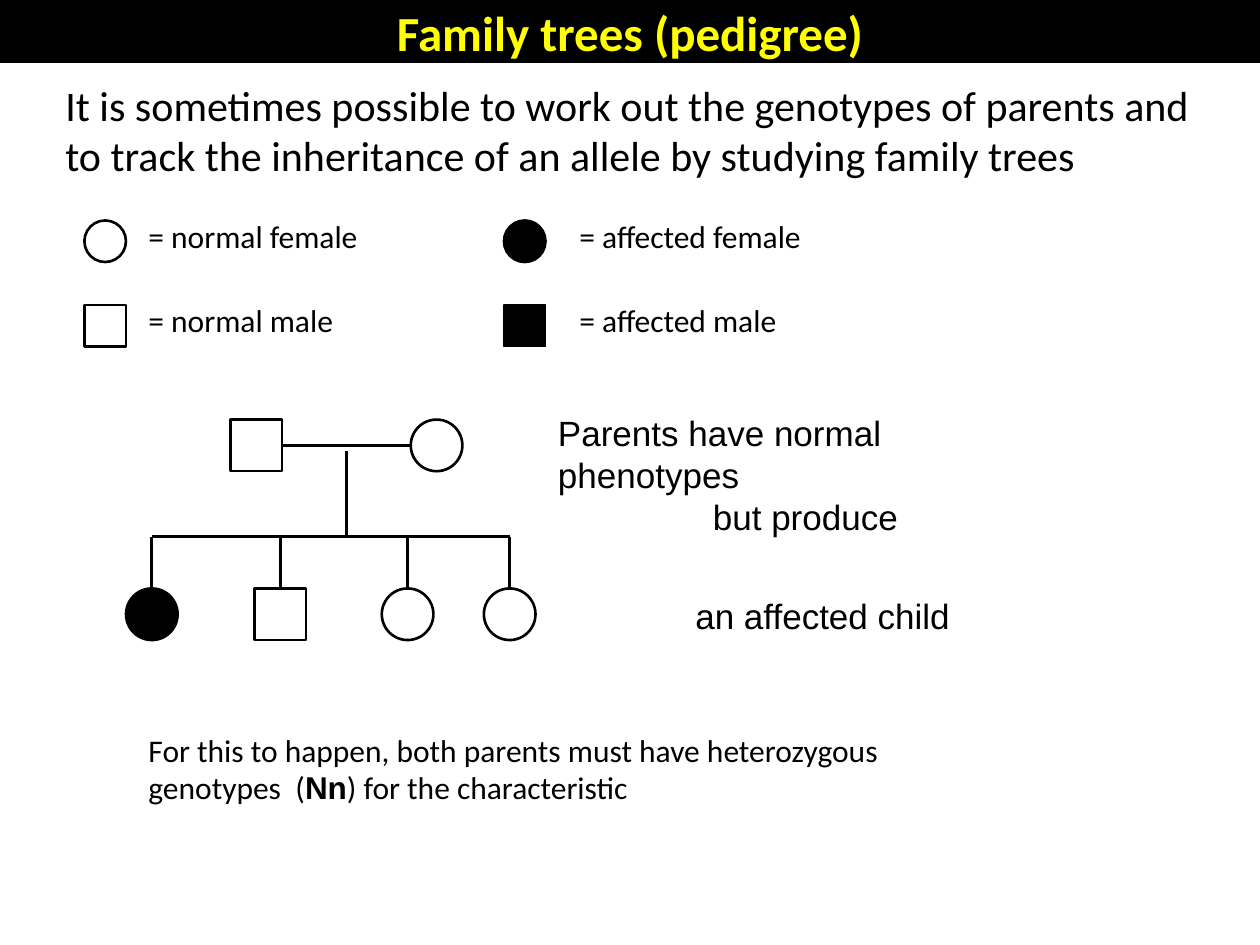
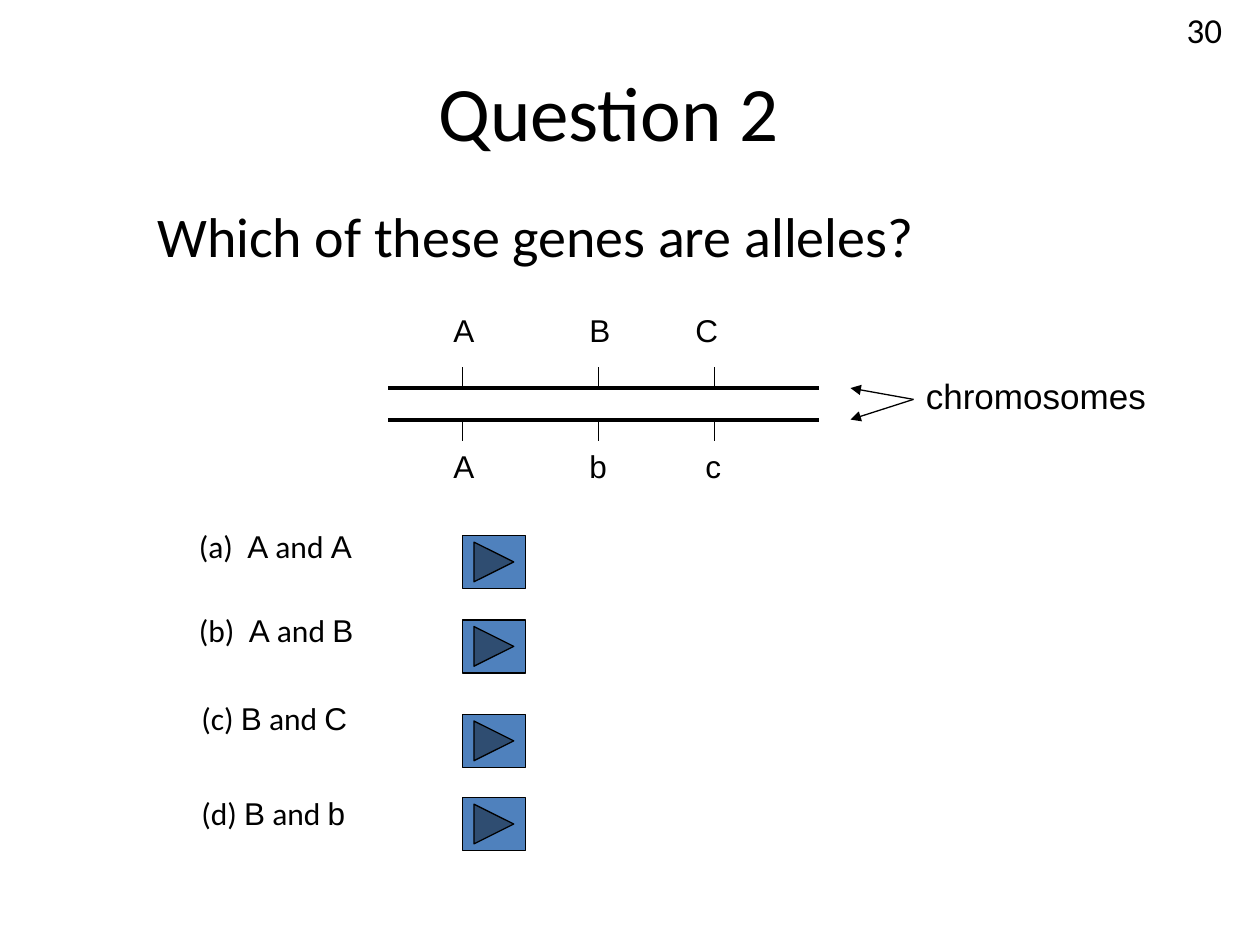
import dataclasses
import typing

import lxml.etree
import pptx
import pptx.dml.color
import pptx.enum.shapes
import pptx.enum.text
import pptx.oxml.ns
import pptx.shapes.autoshape
import pptx.shapes.connector
import pptx.slide
import pptx.text.text
import pptx.util

Inches = pptx.util.Inches
Pt = pptx.util.Pt
qn = pptx.oxml.ns.qn
Preset = pptx.enum.shapes.MSO_SHAPE
Anchor = pptx.enum.text.MSO_ANCHOR
Align = pptx.enum.text.PP_ALIGN

COLORS = {
    "ink": "000000",
    "paper": "FFFFFF",
    "title": "FFFF00",
    "button": "4F81BD",
}
BODY = {"name": "Calibri", "size": Pt(18), "bold": False}
ARIAL = {"name": "Arial"}
NOTE = BODY | ARIAL | {"size": Pt(20)}
CENTERED = {"alignment": Align.CENTER}
FEMALE = Preset.OVAL
MALE = Preset.RECTANGLE


@dataclasses.dataclass(frozen=True)
class Run:
    text: str
    format: dict[str, typing.Any] = dataclasses.field(default_factory=dict)


Paragraph = tuple[Run, ...]


@dataclasses.dataclass(frozen=True)
class Label:
    left: float
    top: float
    width: float
    height: float
    paragraphs: tuple[Paragraph, ...]
    font: dict[str, typing.Any] = dataclasses.field(default_factory=lambda: BODY)
    color: str = "ink"
    layout: dict[str, typing.Any] = dataclasses.field(default_factory=dict)
    anchor: Anchor = Anchor.TOP


@dataclasses.dataclass(frozen=True)
class Symbol:
    preset: Preset
    left: float
    top: float
    width: float
    height: float
    fill: str = "paper"
    weight: float = 1.5


@dataclasses.dataclass(frozen=True)
class KeyEntry:
    preset: Preset
    fill: str
    symbol_left: float
    text_left: float
    top: float
    meaning: str
    weight: float = 1.5


@dataclasses.dataclass(frozen=True)
class Locus:
    tick: float
    upper: str
    upper_left: float
    lower: str
    lower_left: float


@dataclasses.dataclass(frozen=True)
class Answer:
    letter: str
    first: str
    second: str
    left: float
    top: float
    button_top: float


def plain(*lines: str) -> tuple[Paragraph, ...]:
    return tuple((Run(line),) for line in lines)


def rgb(name: str) -> pptx.dml.color.RGBColor:
    return pptx.dml.color.RGBColor.from_string(COLORS[name])


def apply_format(target: typing.Any, values: dict[str, typing.Any]) -> None:
    for attribute, value in values.items():
        setattr(target, attribute, value)


def write_label(frame: pptx.text.text.TextFrame, label: Label) -> None:
    apply_format(frame, {"word_wrap": True, "vertical_anchor": label.anchor})
    for index, runs in enumerate(label.paragraphs):
        paragraph = frame.add_paragraph() if index else frame.paragraphs[0]
        apply_format(paragraph, label.layout)
        for part in runs:
            run = paragraph.add_run()
            run.text = part.text
            apply_format(run.font, label.font | part.format)
            run.font.color.rgb = rgb(label.color)


def draw_label(
    slide: pptx.slide.Slide, label: Label
) -> pptx.shapes.autoshape.Shape:
    box = slide.shapes.add_textbox(
        Inches(label.left), Inches(label.top), Inches(label.width), Inches(label.height)
    )
    write_label(box.text_frame, label)
    return box


def draw_symbol(
    slide: pptx.slide.Slide, symbol: Symbol
) -> pptx.shapes.autoshape.Shape:
    shape = slide.shapes.add_shape(
        symbol.preset,
        Inches(symbol.left),
        Inches(symbol.top),
        Inches(symbol.width),
        Inches(symbol.height),
    )
    shape.shadow.inherit = False
    shape.fill.solid()
    shape.fill.fore_color.rgb = rgb(symbol.fill)
    shape.line.color.rgb = rgb("ink")
    shape.line.width = Pt(symbol.weight)
    return shape


def draw_line(
    slide: pptx.slide.Slide,
    start: tuple[float, float],
    end: tuple[float, float],
    weight: float = 1.5,
    arrow: bool = False,
) -> pptx.shapes.connector.Connector:
    line = slide.shapes.add_connector(
        pptx.enum.shapes.MSO_CONNECTOR.STRAIGHT,
        *(Inches(value) for value in (*start, *end)),
    )
    line.line.color.rgb = rgb("ink")
    line.line.width = Pt(weight)
    properties = line.element.spPr
    if arrow:
        outline = properties.find(qn("a:ln"))
        lxml.etree.SubElement(outline, qn("a:tailEnd"), type="triangle")
    lxml.etree.SubElement(properties, qn("a:effectLst"))
    return line


def draw_key(slide: pptx.slide.Slide) -> None:
    entries = (
        KeyEntry(FEMALE, "paper", 0.67, 1.08, 1.75, "= normal female"),
        KeyEntry(FEMALE, "ink", 4, 4.5, 1.75, "= affected female"),
        KeyEntry(MALE, "paper", 0.67, 1.08, 2.42, "= normal male"),
        KeyEntry(MALE, "ink", 4, 4.5, 2.42, "= affected male", 0.75),
    )
    for entry in entries:
        draw_symbol(
            slide,
            Symbol(entry.preset, entry.symbol_left, entry.top, 0.33, 0.33,
                   entry.fill, entry.weight),
        )
        draw_label(
            slide,
            Label(entry.text_left, entry.top - 0.08, 2.5, 0.5, plain(entry.meaning)),
        )


def draw_pedigree(slide: pptx.slide.Slide) -> None:
    size, parent_top, child_top, sibling_line = 0.41, 3.33, 4.67, 4.26
    father = draw_symbol(slide, Symbol(MALE, 1.83, parent_top, size, size))
    draw_symbol(slide, Symbol(FEMALE, 3.26, parent_top, size, size))
    middle = parent_top + size / 2
    marriage = draw_line(slide, (1.83 + size, middle), (3.26, middle))
    marriage.begin_connect(father, 3)

    children = (
        (FEMALE, 1, "ink"),
        (MALE, 2.02, "paper"),
        (FEMALE, 3.03, "paper"),
        (FEMALE, 3.84, "paper"),
    )
    centers = [left + size / 2 for _, left, _ in children]
    draw_line(slide, (centers[0], sibling_line), (centers[-1], sibling_line))
    draw_line(slide, (2.75, 3.58), (2.75, sibling_line))
    for (preset, left, fill), center in zip(children, centers):
        child = draw_symbol(slide, Symbol(preset, left, child_top, size, size, fill))
        descent = draw_line(slide, (center, sibling_line), (center, child_top))
        descent.end_connect(child, 0)


def build_family_trees(slide: pptx.slide.Slide) -> None:
    introduction = plain(
        "It is sometimes possible to work out the genotypes of parents and",
        "to track the inheritance of an allele by studying family trees",
    )
    conclusion = (
        (Run("For this to happen, both parents must have heterozygous"),),
        (
            Run("genotypes  ("),
            Run("Nn", ARIAL | {"bold": True}),
            Run(") for the characteristic"),
        ),
    )
    draw_label(
        slide,
        Label(0.42, 0.58, 9.58, 0.91, introduction, BODY | {"size": Pt(24)}),
    )
    draw_key(slide)
    draw_pedigree(slide)
    observation = draw_label(
        slide,
        Label(4.33, 3.22, 4, 1.1,
              plain("Parents have normal phenotypes", "but produce"), NOTE),
    )
    indented = observation.text_frame.paragraphs[1]
    indented._p.get_or_add_pPr().set("marL", str(Inches(1.23)))
    draw_label(slide, Label(5.42, 4.67, 2.5, 0.43, plain("an affected child"), NOTE))
    draw_label(slide, Label(1.08, 5.75, 7.72, 0.9, conclusion))

    title = Label(0, 0, 10, 0.5, plain("Family trees (pedigree)"),
                  BODY | {"size": Pt(28), "bold": True}, "title", CENTERED,
                  Anchor.MIDDLE)
    band = draw_symbol(
        slide,
        Symbol(Preset.RECTANGLE, title.left, title.top, title.width, title.height, "ink"),
    )
    band.line.fill.background()
    write_label(band.text_frame, title)


def draw_chromosomes(slide: pptx.slide.Slide) -> None:
    upper, lower, tick = 3.08, 3.33, 0.17
    loci = (
        Locus(3.67, "A", 3.5, "A", 3.5),
        Locus(4.75, "B", 4.58, "b", 4.58),
        Locus(5.67, "C", 5.42, "c", 5.5),
    )
    for level in (upper, lower):
        draw_line(slide, (3.08, level), (6.5, level), 2.25)
    for locus in loci:
        for level, end, allele, left, top in (
            (upper, upper - tick, locus.upper, locus.upper_left, 2.42),
            (lower, lower + tick, locus.lower, locus.lower_left, 3.5),
        ):
            draw_line(slide, (locus.tick, level), (locus.tick, end), 0.75)
            draw_label(slide, Label(left, top, 0.5, 0.5, plain(allele), BODY | ARIAL))
    caption = draw_label(
        slide, Label(7.25, 2.92, 2.2, 0.5, plain("chromosomes"), NOTE)
    )
    for level in (upper, lower):
        pointer = draw_line(slide, (7.25, 3.17), (6.75, level), 0.75, arrow=True)
        pointer.begin_connect(caption, 1)


def draw_answers(slide: pptx.slide.Slide) -> None:
    answers = (
        Answer("(a)  ", "A", "A", 1.48, 4.13, 4.25),
        Answer("(b)  ", "A", "B", 1.48, 4.8, 4.92),
        Answer("(c) ", "B", "C", 1.5, 5.5, 5.67),
        Answer("(d) ", "B", "b", 1.5, 6.25, 6.33),
    )
    for answer in answers:
        runs = (
            Run(answer.letter),
            Run(answer.first, ARIAL),
            Run(" and "),
            Run(answer.second, ARIAL),
        )
        draw_label(slide, Label(answer.left, answer.top, 1.85, 0.5, (runs,)))
        draw_symbol(
            slide,
            Symbol(Preset.ACTION_BUTTON_FORWARD_OR_NEXT, 3.67, answer.button_top,
                   0.5, 0.42, "button", 0.75),
        )


def build_question(slide: pptx.slide.Slide) -> None:
    draw_label(
        slide,
        Label(0.58, 0.25, 8.5, 1.25, plain("Question 2"), BODY | {"size": Pt(44)},
              layout=CENTERED, anchor=Anchor.MIDDLE),
    )
    draw_label(
        slide,
        Label(1.15, 1.55, 6.5, 0.64, plain("Which of these genes are alleles?"),
              BODY | {"size": Pt(32)}),
    )
    draw_chromosomes(slide)
    draw_answers(slide)
    draw_label(
        slide, Label(9.32, 0.02, 0.6, 0.43, plain("30"), BODY | {"size": Pt(20)})
    )


def main() -> None:
    deck = pptx.Presentation()
    apply_format(deck, {"slide_width": Inches(10), "slide_height": Inches(7.5)})
    for build in (build_family_trees, build_question):
        build(deck.slides.add_slide(deck.slide_layouts[6]))
    deck.save("out.pptx")


if __name__ == "__main__":
    main()
